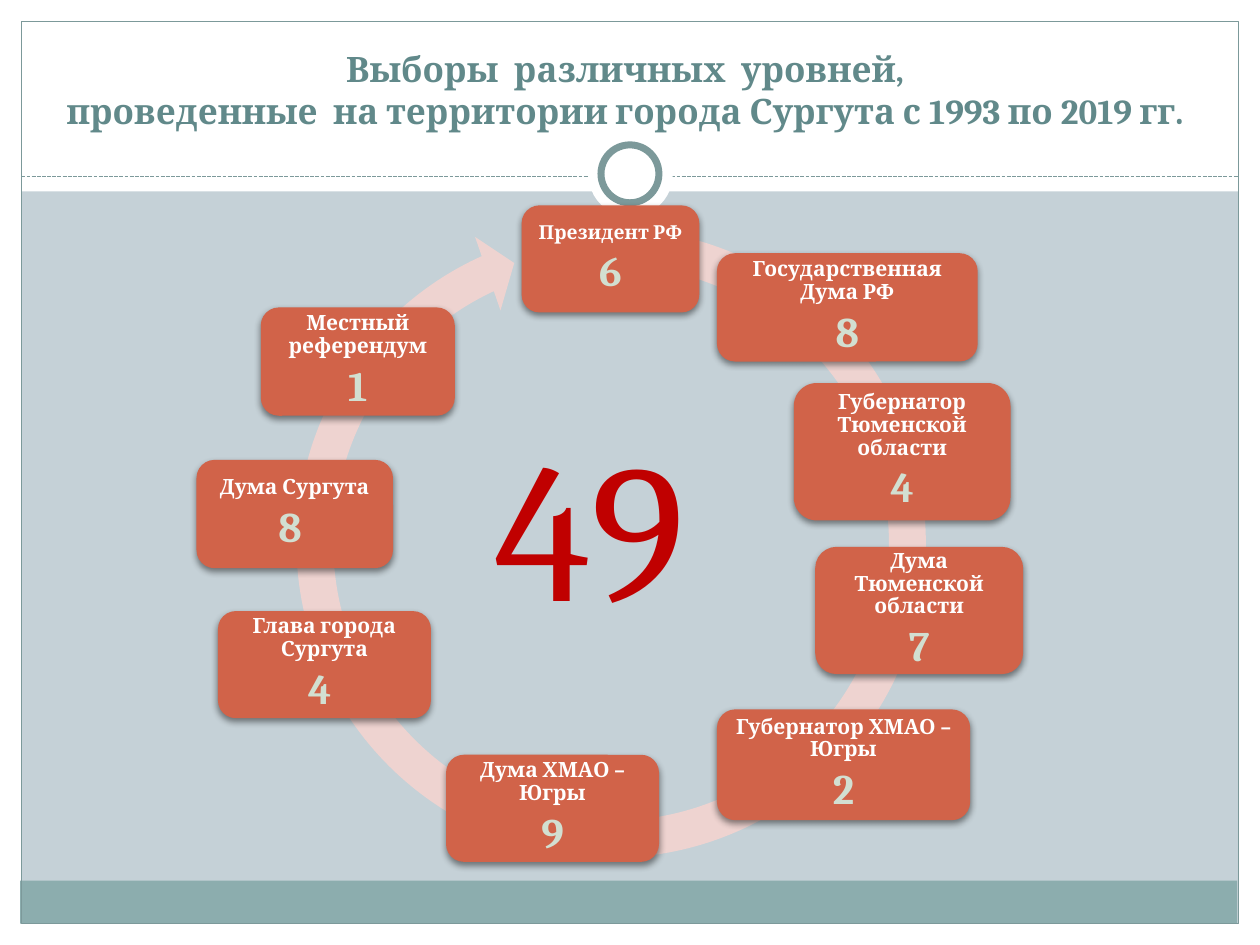
import pptx
import pptx.util
import pptx.oxml
from pptx.dml.color import RGBColor
from pptx.enum.dml import MSO_LINE
from pptx.enum.shapes import MSO_CONNECTOR, MSO_SHAPE
from pptx.enum.text import MSO_ANCHOR, PP_ALIGN
from pptx.oxml.ns import nsdecls
from pptx.util import Inches, Pt

COLORS = {
    "background": "C5D1D7", "white": "FFFFFF", "frame": "7C999A",
    "footer": "8CADAE", "title": "61898A", "arrow": "EED3D0",
    "card": "D16349", "count": "D2DFD1", "total": "C00000",
}
FONT = "Cambria"
TITLE = ("Выборы  различных  уровней,\v"
         "проведенные  на территории города Сургута с 1993 по 2019 гг.")
TOTAL = "49"

# label, count, label size, (left, top, width, height)
ELECTIONS = [
    ("Президент РФ", "6", 11, (4.14, 1.63, 1.41, 0.85)),
    ("Государственная Дума РФ", "8", 12, (5.69, 2.01, 2.07, 0.86)),
    ("Губернатор Тюменской области", "4", 12, (6.3, 3.04, 1.72, 1.09)),
    ("Дума Тюменской области", "7", 12, (6.47, 4.34, 1.65, 1.01)),
    ("Губернатор ХМАО – Югры", "2", 12, (5.69, 5.63, 2.01, 0.88)),
    ("Дума ХМАО – Югры", "9", 12, (3.54, 5.99, 1.69, 0.85)),
    ("Глава города Сургута", "4 ", 12, (1.73, 4.85, 1.69, 0.85)),
    ("Дума Сургута", "8 ", 12, (1.56, 3.65, 1.56, 0.86)),
    ("Местный референдум", "1", 12, (2.07, 2.44, 1.54, 0.86)),
]
WHITE_BANDS = [(0, 7.33, 10, 0.17), (0, 0, 10, 1.52),
               (0, 0, 0.17, 7.5), (9.83, 0, 0.17, 7.5)]


def color(name):
    return RGBColor.from_string(COLORS[name])


def add_shape(page, kind, place, fill=None, line=None, width=0.75):
    shape = page.shapes.add_shape(kind, *map(Inches, place))
    shape.shadow.inherit = False
    if fill:
        shape.fill.solid()
        shape.fill.fore_color.rgb = color(fill)
    else:
        shape.fill.background()
    if line:
        shape.line.color.rgb = color(line)
        shape.line.width = Pt(width)
    else:
        shape.line.fill.background()
    return shape


def style(para, size, color_name, bold=False, align=PP_ALIGN.CENTER):
    para.alignment = align
    para.font.name = FONT
    para.font.size = Pt(size)
    para.font.bold = bold
    para.font.color.rgb = color(color_name)


def add_text(page, place, text, size, color_name, anchor, **options):
    box = page.shapes.add_textbox(*map(Inches, place))
    frame = box.text_frame
    frame.word_wrap = True
    frame.vertical_anchor = anchor
    frame.text = text
    style(frame.paragraphs[0], size, color_name, **options)


def drop_shadow(shape):
    effects = shape._element.spPr.find(pptx.oxml.ns.qn("a:effectLst"))
    effects.append(pptx.oxml.parse_xml(
        f'<a:outerShdw {nsdecls("a")} blurRad="{Pt(4)}" dist="{Pt(2)}" '
        'dir="5400000" rotWithShape="0"><a:srgbClr val="000000">'
        '<a:alpha val="45000"/></a:srgbClr></a:outerShdw>'))


def add_card(page, label, count, label_size, place):
    card = add_shape(page, MSO_SHAPE.ROUNDED_RECTANGLE, place, "card")
    drop_shadow(card)
    frame = card.text_frame
    frame.word_wrap = True
    frame.vertical_anchor = MSO_ANCHOR.MIDDLE
    frame.margin_left = frame.margin_right = Inches(0.09)
    frame.margin_top = frame.margin_bottom = Inches(0.09)
    frame.text = f"{label}\n{count}"
    looks = [(label_size, "white"), (24, "count")]
    for para, (size, color_name) in zip(frame.paragraphs, looks):
        style(para, size, color_name, bold=True)
        para.line_spacing = 0.9
        para.space_after = Pt(round(0.35 * size))


def add_frame(page):
    """Draw the white border, footer band, dashed rule and ring."""
    for place in WHITE_BANDS:
        add_shape(page, MSO_SHAPE.RECTANGLE, place, "white")
    add_shape(page, MSO_SHAPE.RECTANGLE, (0.16, 6.99, 9.66, 0.34), "footer")
    add_shape(page, MSO_SHAPE.RECTANGLE, (0.17, 0.17, 9.66, 7.16), line="frame")
    rule = page.shapes.add_connector(
        MSO_CONNECTOR.STRAIGHT, *map(Inches, (0.17, 1.4, 9.83, 1.4)))
    rule.line.color.rgb = color("frame")
    rule.line.width = Pt(0.75)
    rule.line.dash_style = MSO_LINE.SQUARE_DOT
    rule._element.spPr.append(
        pptx.oxml.parse_xml(f'<a:effectLst {nsdecls("a")}/>'))
    add_shape(page, MSO_SHAPE.OVAL, (4.67, 1.05, 0.67, 0.67), "white")
    add_shape(page, MSO_SHAPE.OVAL, (4.77, 1.15, 0.46, 0.46),
              "white", "frame", 4)


def main():
    deck = pptx.Presentation()
    deck.slide_width, deck.slide_height = Inches(10), Inches(7.5)
    page = deck.slides.add_slide(deck.slide_layouts[6])
    page.background.fill.solid()
    page.background.fill.fore_color.rgb = color("background")

    add_frame(page)
    add_text(page, (0.17, 0.17, 9.58, 0.92), TITLE, 20, "title",
             MSO_ANCHOR.BOTTOM, bold=True)

    cycle = add_shape(page, MSO_SHAPE.CIRCULAR_ARROW,
                      (2.19, 1.65, 5.32, 5.32), "arrow")
    for index, value in enumerate((0.055, 3.307, 147.241, 168.319, 0.058)):
        cycle.adjustments[index] = value

    for election in ELECTIONS:
        add_card(page, *election)
    add_text(page, (3.83, 3.17, 2.25, 1.99), TOTAL, 112, "total",
             MSO_ANCHOR.TOP, align=PP_ALIGN.LEFT)
    deck.save("out.pptx")


if __name__ == "__main__":
    main()
